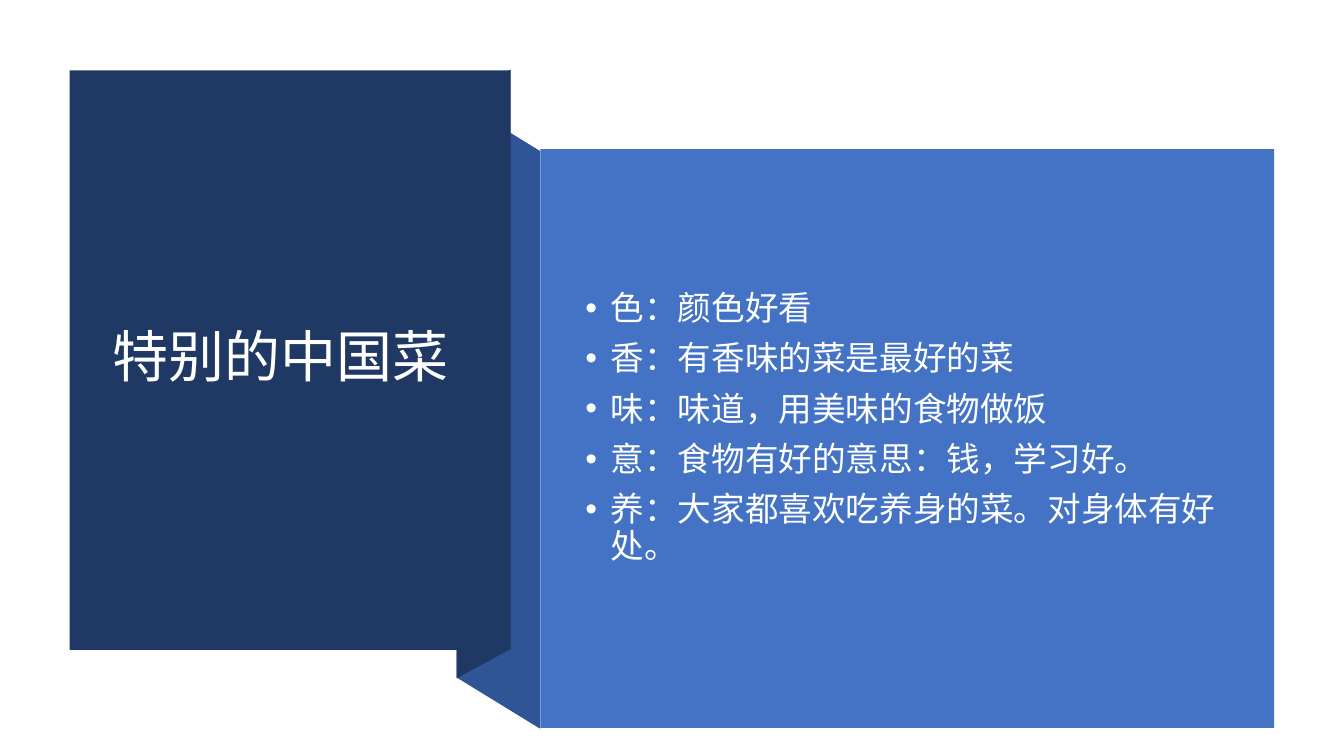
import pptx
import pptx.enum.shapes
import pptx.enum.text
import pptx.oxml.ns
import pptx.util
from lxml import etree

Pt = pptx.util.Pt

COLOURS = {
    "navy": "203864",
    "fold": "2F5597",
    "blue": "4472C4",
    "title": "FFFFFF",
    "body": "FEFFFF",
}

QUALITIES = [
    "色：颜色好看",
    "香：有香味的菜是最好的菜",
    "味：味道，用美味的食物做饭",
    "意：食物有好的意思：钱，学习好。",
    "养：大家都喜欢吃养身的菜。对身体有好处。",
]


class Painter:
    """Draws elements on one page in a shared style; lengths in points."""

    font = "Calibri"
    line_spacing = 0.9
    bullet_indent = 18

    def __init__(self, page):
        self.page = page

    def colour(self, name):
        return pptx.dml.color.RGBColor.from_string(COLOURS[name])

    def paint(self, shape, fill):
        shape.shadow.inherit = False
        shape.fill.solid()
        shape.fill.fore_color.rgb = self.colour(fill)
        shape.line.fill.background()

    def polygon(self, corners, fill):
        points = [(Pt(x), Pt(y)) for x, y in corners]
        builder = self.page.shapes.build_freeform(*points[0])
        builder.add_line_segments(points[1:], close=True)
        self.paint(builder.convert_to_shape(), fill)

    def rectangle(self, left, top, width, height, fill):
        kind = pptx.enum.shapes.MSO_SHAPE.RECTANGLE
        box = self.page.shapes.add_shape(kind, Pt(left), Pt(top), Pt(width), Pt(height))
        self.paint(box, fill)

    def text(self, left, top, width, height, lines, size, colour, bullets=False):
        box = self.page.shapes.add_textbox(Pt(left), Pt(top), Pt(width), Pt(height))
        frame = box.text_frame
        frame.word_wrap = True
        frame.vertical_anchor = pptx.enum.text.MSO_ANCHOR.MIDDLE
        for index, line in enumerate(lines):
            para = frame.add_paragraph() if index else frame.paragraphs[0]
            para.line_spacing = self.line_spacing
            if bullets:
                para.space_before = Pt(10)
                self.bullet(para)
            span = para.add_run()
            span.text = line
            span.font.name = self.font
            span.font.size = Pt(size)
            span.font.color.rgb = self.colour(colour)

    def bullet(self, para):
        properties = para._p.get_or_add_pPr()
        properties.set("marL", str(Pt(self.bullet_indent)))
        properties.set("indent", str(-Pt(self.bullet_indent)))
        qn = pptx.oxml.ns.qn
        etree.SubElement(properties, qn("a:buFont")).set("typeface", "Arial")
        etree.SubElement(properties, qn("a:buChar")).set("char", "•")


def main():
    deck = pptx.Presentation()
    deck.slide_width, deck.slide_height = Pt(960), Pt(540)
    painter = Painter(deck.slides.add_slide(deck.slide_layouts[6]))

    # Ribbon folds behind the two panels
    painter.polygon([(385.9, 520.6), (326.2, 484), (326.2, 71.3), (385.9, 108)], "fold")
    painter.polygon([(364.5, 463.7), (326.2, 484.5), (326.2, 70.6), (364.5, 49.7)], "navy")

    painter.rectangle(49.8, 50.3, 315, 414, "navy")
    painter.text(73.4, 77, 267.1, 359.3, ["特别的中国菜"], 40, "title")

    painter.rectangle(385.9, 106.6, 524.2, 413.3, "blue")
    painter.text(411.1, 135.4, 468.7, 341.3, QUALITIES, 24, "body", bullets=True)

    deck.save("out.pptx")


if __name__ == "__main__":
    main()
